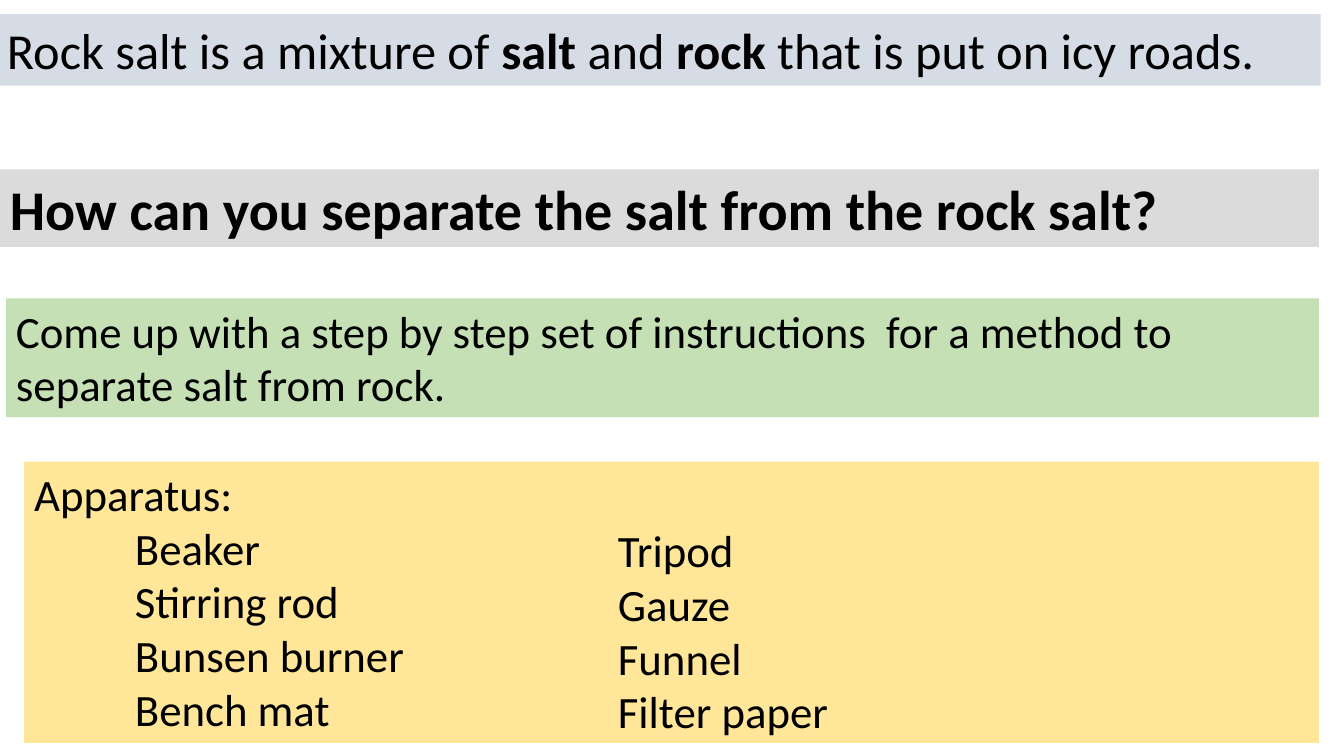
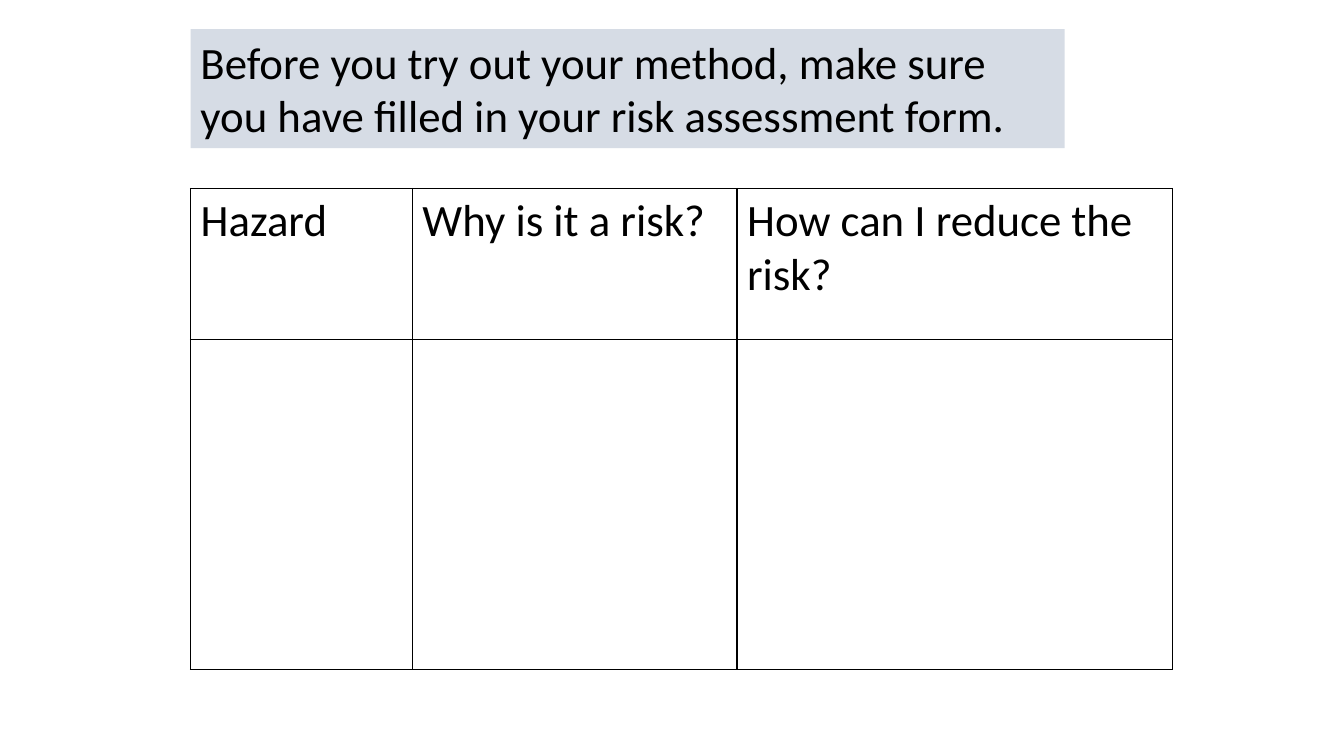
from pptx import Presentation
from pptx.dml.color import RGBColor
from pptx.enum.text import MSO_ANCHOR
from pptx.oxml.ns import qn
from pptx.util import Inches, Pt
from lxml.etree import SubElement

FONT = "Calibri"
BODY_SIZE = 32
BLACK = RGBColor(0x00, 0x00, 0x00)
BLUE_GREY = RGBColor(0xD6, 0xDC, 0xE5)
GREY = RGBColor(0xDB, 0xDB, 0xDB)
GREEN = RGBColor(0xC5, 0xE0, 0xB4)
YELLOW = RGBColor(0xFF, 0xE6, 0x99)

LIST_TOP, LIST_HEIGHT = 4.58, 2.79
LIST_INDENT = 1


def style_font(font, size=BODY_SIZE, bold=False):
    font.name = FONT
    font.size = Pt(size)
    font.bold = bold
    font.color.rgb = BLACK


def add_band(slide, box, fill, lines, size=BODY_SIZE, anchor=MSO_ANCHOR.TOP):
    """Add a filled text box; each line is a list of (text, bold) runs."""
    band = slide.shapes.add_textbox(*map(Inches, box))
    band.fill.solid()
    band.fill.fore_color.rgb = fill
    frame = band.text_frame
    frame.word_wrap = True
    frame.vertical_anchor = anchor
    for index, line in enumerate(lines):
        paragraph = frame.add_paragraph() if index else frame.paragraphs[0]
        for text, bold in line:
            run = paragraph.add_run()
            run.text = text
            style_font(run.font, size, bold)
    return band


def plain(*texts):
    return [[(text, False)] for text in texts]


def set_borders(cell, color=BLACK, width=1):
    properties = cell._tc.get_or_add_tcPr()
    for position, side in enumerate(("a:lnL", "a:lnR", "a:lnT", "a:lnB")):
        line = SubElement(properties, qn(side), w=str(Pt(width)))
        fill = SubElement(line, qn("a:solidFill"))
        SubElement(fill, qn("a:srgbClr"), val=str(color))
        properties.remove(line)
        properties.insert(position, line)


def add_form(slide, left, top, headings, widths, heights):
    """Add a bordered table with headings above empty cells to fill in."""
    form = slide.shapes.add_table(
        len(heights), len(widths), Inches(left), Inches(top),
        Inches(sum(widths)), Inches(sum(heights))).table
    form.first_row = False
    form.horz_banding = False
    for column, width in zip(form.columns, widths):
        column.width = Inches(width)
    for row, height in zip(form.rows, heights):
        row.height = Inches(height)
    for cell in form.iter_cells():
        cell.fill.background()
        set_borders(cell)
    for cell, heading in zip(form.rows[0].cells, headings):
        cell.text = heading
        style_font(cell.text_frame.paragraphs[0].runs[0].font)


def build_task(slide):
    add_band(slide, (-0.03, 0.14, 13.13, 0.71), BLUE_GREY, [[
        ("Rock salt is a mixture of ", False), ("salt", True),
        (" and ", False), ("rock", True),
        (" that is put on icy roads.", False)]], size=36)
    add_band(slide, (0, 1.68, 13.08, 0.77), GREY, [[
        ("How can you separate the salt from the rock salt?", True)]], size=40)
    add_band(slide, (0.06, 2.96, 13.02, 1.18), GREEN, plain(
        "Come up with a step by step set of instructions  for a method to "
        "separate salt from rock."))
    apparatus = add_band(
        slide, (0.24, LIST_TOP, 5.8, LIST_HEIGHT), YELLOW,
        plain("Apparatus:", "Beaker", "Stirring rod", "Bunsen burner",
              "Bench mat"))
    for item in apparatus.text_frame.paragraphs[1:]:
        item._p.get_or_add_pPr().set("marL", str(Inches(LIST_INDENT)))
    add_band(slide, (6.03, LIST_TOP, 7.05, LIST_HEIGHT), YELLOW,
             plain("Tripod", "Gauze", "Funnel", "Filter paper"),
             anchor=MSO_ANCHOR.BOTTOM)


def build_risk_assessment(slide):
    left = 1.89
    add_band(slide, (left, 0.29, 8.67, 1.18), BLUE_GREY, plain(
        "Before you try out your method, make sure you have filled in your "
        "risk assessment form."))
    add_form(slide, left, 1.87,
             ("Hazard", "Why is it a risk?", "How can I reduce the risk?"),
             widths=(2.2, 3.22, 4.32), heights=(1.5, 3.27))


def main():
    deck = Presentation()
    deck.slide_width, deck.slide_height = Inches(13.33), Inches(7.5)
    blank = deck.slide_layouts[6]
    for build in (build_task, build_risk_assessment):
        build(deck.slides.add_slide(blank))
    deck.save("out.pptx")


if __name__ == "__main__":
    main()
